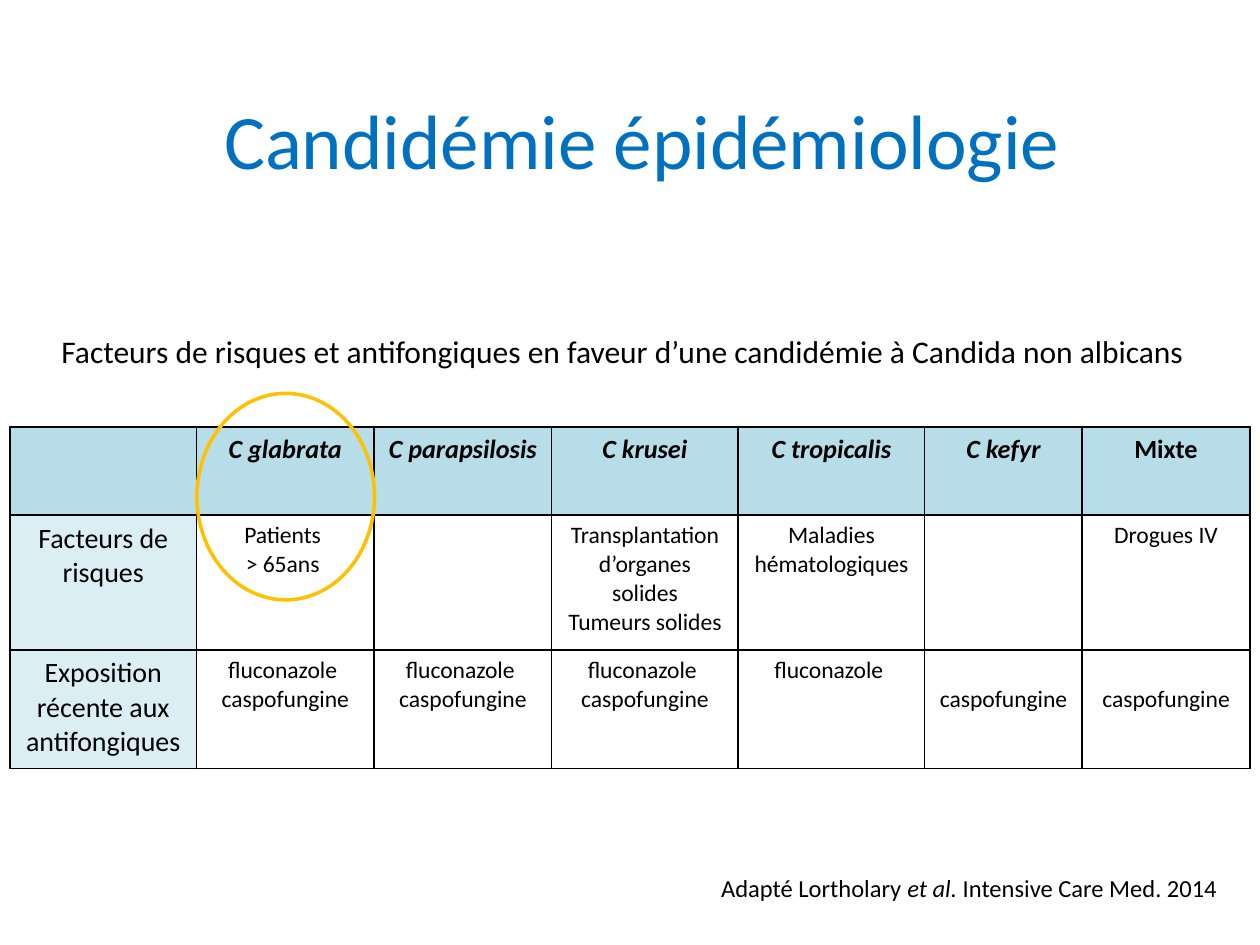
from lxml import etree
from pptx import Presentation
from pptx.dml.color import RGBColor
from pptx.enum.shapes import MSO_SHAPE
from pptx.enum.text import MSO_ANCHOR, MSO_AUTO_SIZE, PP_ALIGN
from pptx.oxml.ns import qn
from pptx.util import Pt

CENTER, LEFT = PP_ALIGN.CENTER, PP_ALIGN.LEFT
MIDDLE = MSO_ANCHOR.MIDDLE
FIT_SHAPE = MSO_AUTO_SIZE.SHAPE_TO_FIT_TEXT
OVAL = MSO_SHAPE.OVAL
TITLE_ONLY = 5

COLORS = {
    "title": "0070C0",
    "text": "000000",
    "border": "000000",
    "header": "B7DEE8",
    "label": "DBEEF4",
    "highlight": "FFC000",
}
HEADER_SIZE, LABEL_SIZE, BODY_SIZE = 15, 16, 13.5
BODY_LINE = 16.5  # height of one line of body text

COL_WIDTHS = [106.6, 101.5, 101.5, 106.6, 106.6, 90, 95.8]
ROW_HEIGHTS = [50.4, 77, 67.7]
SPECIES = ["", "C glabrata", "C parapsilosis", "C krusei", "C tropicalis",
           "C kefyr", "Mixte"]
RISK_FACTORS = ["Facteurs de risques", "Patients \n> 65ans ", "",
                "Transplantation d’organes solides\nTumeurs solides",
                "Maladies hématologiques", "", "Drogues IV"]
BOTH_DRUGS = "fluconazole \ncaspofungine"
EXPOSURE = ["Exposition récente aux antifongiques", BOTH_DRUGS, BOTH_DRUGS,
            BOTH_DRUGS, "fluconazole ", "caspofungine", "caspofungine"]


def rgb(name):
    return RGBColor.from_string(COLORS[name])


class SlideBuilder:
    """Holds the text style and the current slide."""

    def __init__(self, slide, font="Calibri"):
        self.slide = slide
        self.font = font

    def add_run(self, p, text, size, color="text", bold=False, italic=False):
        r = p.add_run()
        r.text = text
        r.font.name = self.font
        r.font.size = Pt(size)
        r.font.bold = bold
        r.font.italic = italic
        r.font.color.rgb = rgb(color)

    def title(self, text, left, top, width, height, size):
        sp = self.slide.shapes.title
        sp.left, sp.top, sp.width, sp.height = map(Pt, (left, top, width, height))
        sp.text_frame.vertical_anchor = MIDDLE
        p = sp.text_frame.paragraphs[0]
        p.alignment = CENTER
        self.add_run(p, text, size, "title")

    def text(self, runs, left, top, width, height, size):
        """Add one line of text from (text, italic) pairs."""
        sp = self.slide.shapes.add_textbox(*map(Pt, (left, top, width, height)))
        tf = sp.text_frame
        tf.word_wrap = False
        tf.auto_size = FIT_SHAPE
        p = tf.paragraphs[0]
        p.alignment = LEFT
        for text, italic in runs:
            self.add_run(p, text, size, italic=italic)

    def ring(self, left, top, width, height, line_width):
        sp = self.slide.shapes.add_shape(OVAL, *map(Pt, (left, top, width, height)))
        sp.shadow.inherit = False
        sp.fill.background()
        sp.line.color.rgb = rgb("highlight")
        sp.line.width = Pt(line_width)

    def table(self, left, top, widths, heights):
        frame = self.slide.shapes.add_table(
            len(heights), len(widths), Pt(left), Pt(top),
            Pt(sum(widths)), Pt(sum(heights)))
        table = frame.table
        table.first_row = table.horz_banding = False
        for column, width in zip(table.columns, widths):
            column.width = Pt(width)
        for row, height in zip(table.rows, heights):
            row.height = Pt(height)
        return table

    def cell(self, cell, text, size, fill=None, bold=False, italic=False):
        self.cell_borders(cell)
        if fill:
            cell.fill.solid()
            cell.fill.fore_color.rgb = rgb(fill)
        else:
            cell.fill.background()
        tf = cell.text_frame
        for i, line in enumerate(text.split("\n")):
            p = tf.add_paragraph() if i else tf.paragraphs[0]
            p.alignment = CENTER
            if line:
                self.add_run(p, line, size, bold=bold, italic=italic)

    def cell_borders(self, cell, width=1):
        tcPr = cell._tc.get_or_add_tcPr()
        for side in ("a:lnL", "a:lnR", "a:lnT", "a:lnB"):
            ln = etree.SubElement(tcPr, qn(side), w=str(Pt(width)))
            fill = etree.SubElement(ln, qn("a:solidFill"))
            etree.SubElement(fill, qn("a:srgbClr"), val=COLORS["border"])


def fill_table(builder, table):
    for col, name in enumerate(SPECIES):
        builder.cell(table.cell(0, col), name, HEADER_SIZE, "header",
                     bold=True, italic=name != "Mixte")
    for row, texts in enumerate((RISK_FACTORS, EXPOSURE), start=1):
        builder.cell(table.cell(row, 0), texts[0], LABEL_SIZE, "label")
        for col, text in enumerate(texts[1:], start=1):
            cell = table.cell(row, col)
            builder.cell(cell, text, BODY_SIZE)
            if text == "caspofungine":  # level with the second drug line
                cell.margin_top = Pt(3.6 + BODY_LINE)


def main():
    prs = Presentation()
    prs.slide_width, prs.slide_height = Pt(720), Pt(540)
    slide = prs.slides.add_slide(prs.slide_layouts[TITLE_ONLY])
    builder = SlideBuilder(slide)

    builder.title("Candidémie épidémiologie ", 48, 34, 648, 90, size=44)
    table = builder.table(5.7, 244, COL_WIDTHS, ROW_HEIGHTS)
    fill_table(builder, table)
    builder.text([("Facteurs de risques et antifongiques en faveur d’une "
                   "candidémie à Candida non albicans", False)],
                 28, 186, 664.5, 29, size=18)
    builder.ring(112.5, 224.8, 101.5, 118, line_width=2)
    builder.text([("Adapté Lortholary ", False), ("et al.", True),
                  (" Intensive Care Med. 2014", False)],
                 405, 495.4, 299.5, 24.2, size=14)
    prs.save("out.pptx")


if __name__ == "__main__":
    main()
